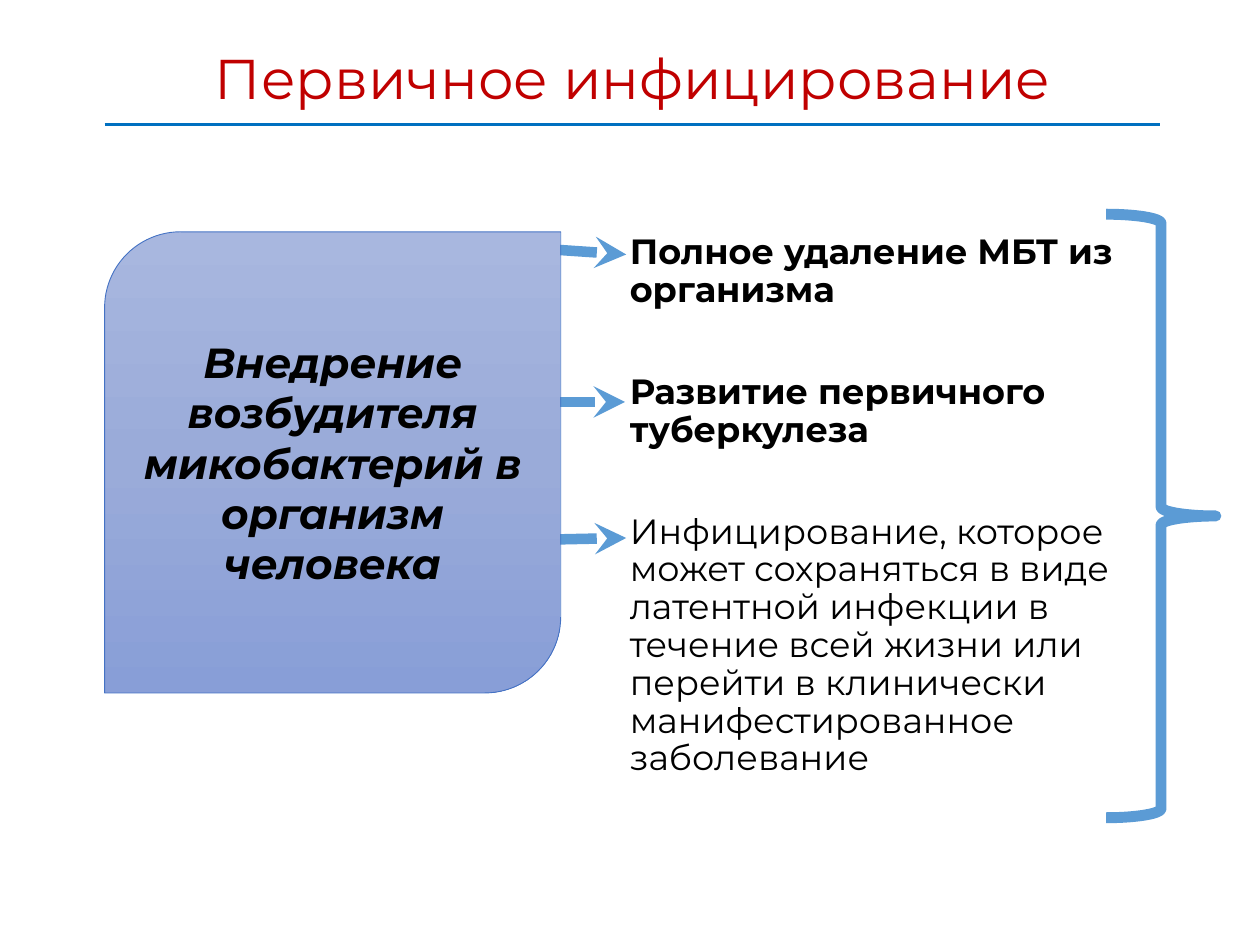
from copy import deepcopy

from pptx import Presentation
from pptx.dml.color import RGBColor
from pptx.enum.shapes import MSO_CONNECTOR, MSO_SHAPE
from pptx.enum.text import MSO_ANCHOR, PP_ALIGN
from pptx.oxml.ns import qn
from pptx.util import Inches, Pt
from lxml import etree

LEFT, CENTER = PP_ALIGN.LEFT, PP_ALIGN.CENTER
TOP, MIDDLE = MSO_ANCHOR.TOP, MSO_ANCHOR.MIDDLE
STRAIGHT = MSO_CONNECTOR.STRAIGHT
BRACE, ROUND_DIAGONAL = MSO_SHAPE.RIGHT_BRACE, MSO_SHAPE.ROUND_2_DIAG_RECTANGLE

FONT = "Montserrat"
COLORS = {
    "title": "C00000", "text": "000000", "white": "FFFFFF", "rule": "0070C0",
    "arrow": "5B9BD5", "border": "4472C4",
    "grad_top": "A8B7DF", "grad_mid": "9AABD9", "grad_bottom": "889ED7",
}


def rgb(name):
    return RGBColor.from_string(COLORS[name])


def write(tf, text, size=20, color="text", bold=False, italic=False,
          align=LEFT, anchor=TOP, spacing=1.0, before=0, new=False):
    """Fill the first paragraph of a frame, or add a new one."""
    tf.word_wrap = True
    tf.vertical_anchor = anchor
    p = tf.add_paragraph() if new else tf.paragraphs[0]
    p.alignment, p.line_spacing, p.space_before = align, spacing, Pt(before)
    r = p.add_run()
    r.text = text
    f = r.font
    f.name, f.size, f.bold, f.italic = FONT, Pt(size), bold, italic
    f.color.rgb = rgb(color)


class SlideBuilder:
    def __init__(self, prs):
        self.s = prs.slides.add_slide(prs.slide_layouts[5])

    def title(self, text, x, y, w, h):
        sp = self.s.shapes.title
        sp.left, sp.top, sp.width, sp.height = map(Inches, (x, y, w, h))
        sp.fill.solid()
        sp.fill.fore_color.rgb = rgb("white")
        write(sp.text_frame, text, size=32, color="title", align=CENTER, anchor=MIDDLE)

    def text(self, items, x, y, w, h, gap):
        tf = self.s.shapes.add_textbox(*map(Inches, (x, y, w, h))).text_frame
        for i, (text, bold) in enumerate(items):
            write(tf, text, bold=bold, spacing=0.9, before=gap if i else 0, new=i > 0)

    def line(self, x1, y1, x2, y2, color, width, arrow=False):
        c = self.s.shapes.add_connector(STRAIGHT, *map(Inches, (x1, y1, x2, y2)))
        c.line.color.rgb = rgb(color)
        c.line.width = Pt(width)
        if arrow:
            etree.SubElement(c.line._get_or_add_ln(), qn("a:tailEnd"), type="stealth")
        etree.SubElement(c._element.spPr, qn("a:effectLst"))

    def shape(self, kind, x, y, w, h, color, width):
        sp = self.s.shapes.add_shape(kind, *map(Inches, (x, y, w, h)))
        sp.shadow.inherit = False
        sp.fill.background()
        sp.line.color.rgb = rgb(color)
        sp.line.width = Pt(width)
        return sp

    def gradient(self, sp, names):
        """Evenly spaced vertical gradient, first colour at the top."""
        sp.fill.gradient()
        sp.fill.gradient_angle = 270
        stops = sp._element.spPr.find(qn("a:gradFill")).find(qn("a:gsLst"))
        while len(stops) < len(names):
            stops.append(deepcopy(stops[0]))
        for i, (stop, name) in enumerate(zip(sp.fill.gradient_stops, names)):
            stop.position = i / (len(names) - 1)
            stop.color.rgb = rgb(name)


def main():
    prs = Presentation()
    prs.slide_width, prs.slide_height = Inches(10), Inches(7.5)
    b = SlideBuilder(prs)

    # Title and rule
    b.title("Первичное инфицирование", 0.83, 0.29, 8.39, 0.64)
    b.line(0.83, 0.99, 9.21, 0.99, "rule", 2)

    # Outcomes
    b.text([
        ("Полное удаление МБТ из организма", True),
        ("Развитие первичного туберкулеза", True),
        ("Инфицирование, которое может сохраняться в виде латентной инфекции "
         "в течение всей жизни или перейти в клинически манифестированное "
         "заболевание", False),
    ], 4.9, 1.81, 4.31, 4.95, gap=36.7)

    # Arrows start behind the cause box
    for x1, y1, x2, y2 in [(4.23, 1.97, 4.97, 2.02),
                           (4.15, 3.19, 4.96, 3.19),
                           (4.01, 4.29, 4.97, 4.27)]:
        b.line(x1, y1, x2, y2, "arrow", 6, arrow=True)

    # Brace around the outcomes
    b.shape(BRACE, 8.78, 1.7, 0.87, 4.79, "arrow", 6.25)

    # Cause box
    cause = b.shape(ROUND_DIAGONAL, 0.83, 1.84, 3.62, 3.66, "border", 0.5)
    b.gradient(cause, ["grad_top", "grad_mid", "grad_bottom"])
    write(cause.text_frame, "Внедрение возбудителя микобактерий в организм человека",
          size=24, bold=True, italic=True, align=CENTER, anchor=MIDDLE)

    prs.save("out.pptx")


if __name__ == "__main__":
    main()
